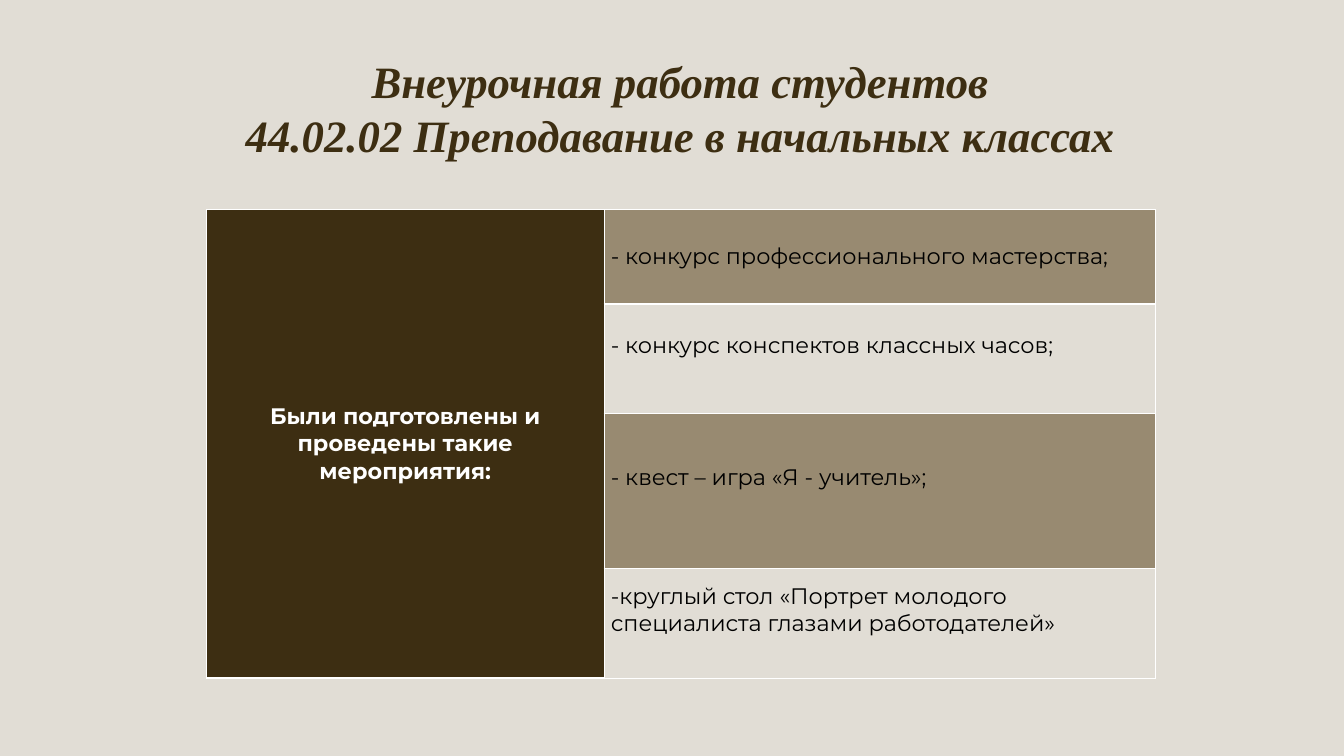
"""Builds the slide on students' extracurricular work."""
from lxml import etree
from pptx import Presentation
from pptx import util as u
from pptx.dml.color import RGBColor
from pptx.enum import text
from pptx.oxml.ns import qn

DARK, TAN, PALE, WHITE, BLACK = "3D2E12", "988A71", "E1DDD5", "FFFFFF", "000000"
COLS = [5.92, 8.2]
ROWS = [1.4, 1.63, 2.31, 1.63]
EVENTS = [
    "- конкурс профессионального мастерства;",
    "- конкурс конспектов классных часов;",
    "- квест – игра «Я - учитель»;",
    "-круглый стол «Портрет молодого специалиста глазами работодателей»",
]


def style(p, font, size, color, bold=False, italic=False):
    for r in p.runs:
        r.font.name, r.font.size = font, u.Pt(size)
        r.font.bold, r.font.italic = bold, italic
        r.font.color.rgb = RGBColor.from_string(color)


def format_cell(cell, fill, bottom):
    cell.fill.solid()
    cell.fill.fore_color.rgb = RGBColor.from_string(fill)
    cell.vertical_anchor = text.MSO_ANCHOR.MIDDLE
    tcPr = cell._tc.get_or_add_tcPr()
    for i, side in enumerate("LRTB"):
        ln = etree.Element(qn("a:ln" + side), w=str(u.Pt(bottom if side == "B" else 1)))
        solid = etree.SubElement(ln, qn("a:solidFill"))
        etree.SubElement(solid, qn("a:srgbClr"), val=WHITE)
        tcPr.insert(i, ln)


prs = Presentation()
prs.slide_width, prs.slide_height = u.Inches(20), u.Inches(11.25)
s = prs.slides.add_slide(prs.slide_layouts[5])
s.background.fill.solid()
s.background.fill.fore_color.rgb = RGBColor.from_string(PALE)

title = s.shapes.title
title.left, title.top, title.width, title.height = map(u.Inches, (1.83, 0.79, 16.58, 1.62))
tf = title.text_frame
tf.margin_left = tf.margin_top = tf.margin_right = tf.margin_bottom = 0
tf.word_wrap = True
tf.auto_size = text.MSO_AUTO_SIZE.SHAPE_TO_FIT_TEXT
tf.vertical_anchor = text.MSO_ANCHOR.TOP
p = tf.paragraphs[0]
p.text = "Внеурочная работа студентов\v44.02.02 Преподавание в начальных классах"
p.alignment = text.PP_ALIGN.CENTER
p.line_spacing = u.Pt(58)
style(p, "Times New Roman", 48, DARK, bold=True, italic=True)

table = s.shapes.add_table(
    len(ROWS), len(COLS), u.Inches(3.07), u.Inches(3.12),
    u.Inches(sum(COLS)), u.Inches(sum(ROWS))).table
table.first_row = table.horz_banding = False
for column, width in zip(table.columns, COLS):
    column.width = u.Inches(width)

for i, (height, event) in enumerate(zip(ROWS, EVENTS)):
    table.rows[i].height = u.Inches(height)
    format_cell(table.cell(i, 0), DARK, 3)
    cell = table.cell(i, 1)
    format_cell(cell, PALE if i % 2 else TAN, 1 if i else 3)
    if i:
        cell.margin_bottom = u.Inches(0.45)
    p = cell.text_frame.paragraphs[0]
    p.text = event
    style(p, "Montserrat", 24, BLACK)

head = table.cell(0, 0)
head.merge(table.cell(len(ROWS) - 1, 0))
p = head.text_frame.paragraphs[0]
p.text = "Были подготовлены и проведены такие мероприятия:"
p.alignment = text.PP_ALIGN.CENTER
style(p, "Montserrat", 24, WHITE, bold=True)

prs.save("out.pptx")
